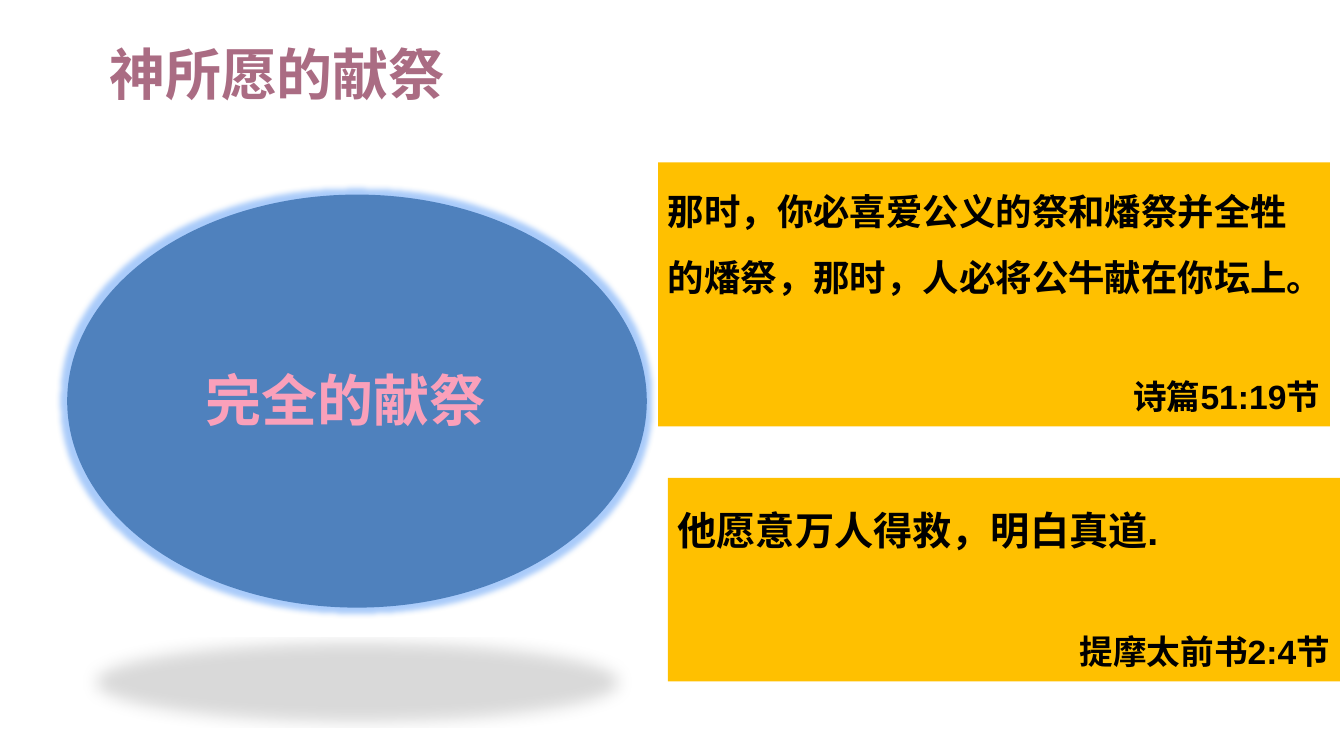
"""Build the slide on the offering that God desires."""
from lxml.etree import SubElement as Sub
from pptx import Presentation
from pptx.dml.color import RGBColor as RGB
from pptx.enum.lang import MSO_LANGUAGE_ID as Lang
from pptx.enum.shapes import MSO_SHAPE as Kind
from pptx.enum.text import MSO_ANCHOR as Anchor, MSO_AUTO_SIZE as Fit, PP_ALIGN as Align
from pptx.oxml import parse_xml
from pptx.oxml.ns import qn
from pptx.util import Pt

HUES = {"title": "AA6C83", "oval": "4F81BD", "pink": "FAA0BA", "gold": "FFC000",
        "ink": "000000", "glow": "A9CBFA"}
CJK = "Noto Sans CJK SC"


def write(para, text, size, hue="ink", face="Arial", align=Align.LEFT, line=1.0, gap=0):
    """Put one bold run into a paragraph."""
    para.alignment = align
    para.line_spacing = line
    para.space_before = Pt(gap)
    run = para.add_run()
    run.text = text
    font = run.font
    font.size, font.bold, font.name = Pt(size), True, face
    font.color.rgb = RGB.from_string(HUES[hue])
    font.language_id = Lang.SIMPLIFIED_CHINESE
    Sub(font._element, qn("a:ea"), typeface=CJK)


deck = Presentation()
deck.slide_width, deck.slide_height = Pt(960), Pt(540)
slide = deck.slides.add_slide(deck.slide_layouts[5])
shapes = slide.shapes

title = shapes.title
title.left, title.top, title.width, title.height = Pt(48), Pt(20.9), Pt(864), Pt(62.6)
frame = title.text_frame
frame.vertical_anchor = Anchor.MIDDLE
frame.margin_left, frame.margin_right = Pt(30), Pt(8)
write(frame.paragraphs[0], "神所愿的献祭", 40, hue="title", face="Noto Sans")

oval = shapes.add_shape(Kind.OVAL, Pt(48), Pt(139), Pt(414), Pt(295))
oval.fill.solid()
oval.fill.fore_color.rgb = RGB.from_string(HUES["oval"])
oval.line.fill.background()
oval._element.spPr.append(parse_xml(
    '<a:effectLst xmlns:a="http://schemas.openxmlformats.org/drawingml/2006/main">'
    f'<a:glow rad="{Pt(8)}"><a:srgbClr val="{HUES["glow"]}"/></a:glow>'
    f'<a:outerShdw blurRad="{Pt(12)}" dist="{Pt(25)}" dir="5400000" sx="90000" sy="-19000"'
    f' rotWithShape="0"><a:srgbClr val="{HUES["ink"]}"><a:alpha val="15000"/></a:srgbClr>'
    '</a:outerShdw></a:effectLst>'))

label = shapes.add_textbox(Pt(139.7), Pt(257.8), Pt(215), Pt(55.4))
label.text_frame.word_wrap = False
label.text_frame.auto_size = Fit.SHAPE_TO_FIT_TEXT
write(label.text_frame.paragraphs[0], "完全的献祭", 40, hue="pink", face=CJK)

verses = [
    (477, 341.3, 145.4, 28, "他愿意万人得救，明白真道.", "提摩太前书2:4节"),
    (470, 116, 188.6, 26, "那时，你必喜爱公义的祭和燔祭并全牲的燔祭，那时，人必将公牛献在你坛上。",
     "诗篇51:19节"),
]
for left, top, high, size, verse, source in verses:
    card = shapes.add_shape(Kind.RECTANGLE, Pt(left), Pt(top), Pt(480), Pt(high))
    card.shadow.inherit = False
    card.fill.solid()
    card.fill.fore_color.rgb = RGB.from_string(HUES["gold"])
    card.line.fill.background()
    frame = card.text_frame
    frame.word_wrap = True
    frame.auto_size = Fit.SHAPE_TO_FIT_TEXT
    frame.vertical_anchor = Anchor.TOP
    write(frame.paragraphs[0], verse, size, line=1.5)
    write(frame.add_paragraph(), source, 24, align=Align.RIGHT, line=1.5, gap=41)

deck.save("out.pptx")
